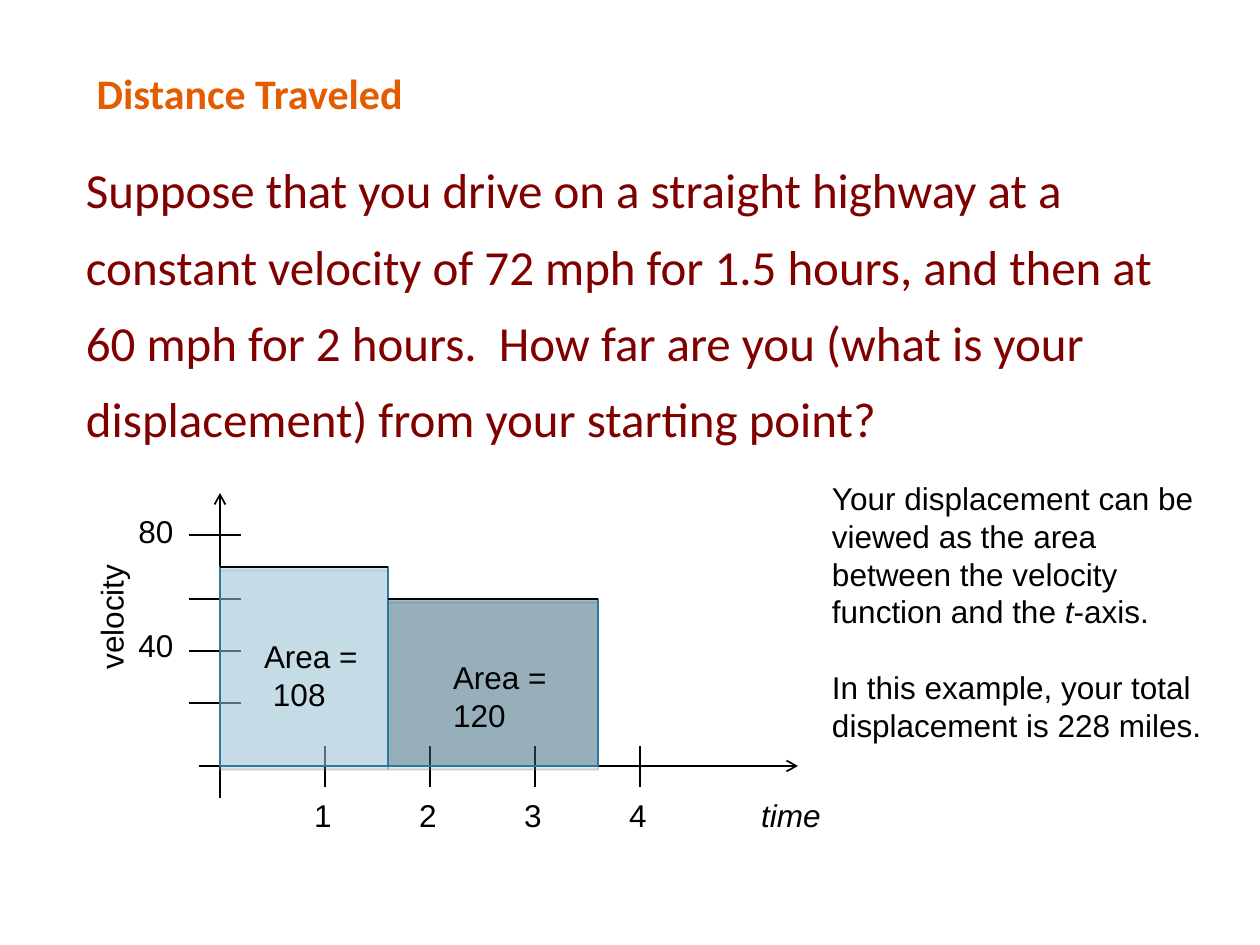
from lxml.etree import SubElement
from pptx import Presentation
from pptx.dml.color import RGBColor
from pptx.enum.shapes import MSO_CONNECTOR, MSO_SHAPE
from pptx.enum.text import MSO_ANCHOR, PP_ALIGN
from pptx.oxml.ns import qn
from pptx.util import Emu, Pt

BLACK = RGBColor(0x00, 0x00, 0x00)
ORANGE = RGBColor(0xE4, 0x5C, 0x00)
MAROON = RGBColor(0x80, 0x00, 0x00)
LIGHT_BLUE = RGBColor(0x9F, 0xCF, 0xE4)
DARK_BLUE = RGBColor(0x21, 0x5D, 0x77)
EDGE_BLUE = RGBColor(0x28, 0x7A, 0x9E)
SHADOW_GREY = RGBColor(0x80, 0x80, 0x80)


def px(length):
    """Turn pixels at 126 to the inch into EMU."""
    return Emu(round(length * 914400 / 126))


def add_run(paragraph, text, size=18, font="Arial", color=BLACK, bold=False, italic=False):
    """Add one formatted run."""
    run = paragraph.add_run()
    run.text = text
    run.font.size = Pt(size)
    run.font.name = font
    run.font.color.rgb = color
    run.font.bold = bold
    run.font.italic = italic


def add_frame(slide, left, top, width, height):
    """Add a wrapping text box without insets; return its shape and frame."""
    textbox = slide.shapes.add_textbox(px(left), px(top), px(width), px(height))
    frame = textbox.text_frame
    frame.word_wrap = True
    frame.margin_left = frame.margin_right = frame.margin_top = frame.margin_bottom = 0
    return textbox, frame


def add_label(slide, text, center_x, center_y, width=120, italic=False):
    """Add a one-line label centred on a point."""
    label, frame = add_frame(slide, center_x - width / 2, center_y - 19, width, 38)
    frame.vertical_anchor = MSO_ANCHOR.MIDDLE
    frame.paragraphs[0].alignment = PP_ALIGN.CENTER
    add_run(frame.paragraphs[0], text, italic=italic)
    return label


def add_line(slide, x1, y1, x2, y2, arrow=False):
    """Draw a thin black line, with an arrowhead at its end if asked."""
    line = slide.shapes.add_connector(MSO_CONNECTOR.STRAIGHT, px(x1), px(y1), px(x2), px(y2))
    line.line.color.rgb = BLACK
    line.line.width = Pt(1)
    if arrow:
        SubElement(line.line._get_or_add_ln(), qn("a:tailEnd"), type="arrow")
    SubElement(line._element.spPr, qn("a:effectLst"))


def add_area(slide, left, top, right, bottom, color, opacity):
    """Draw a translucent area with a soft grey shadow below it."""
    area = slide.shapes.add_shape(
        MSO_SHAPE.RECTANGLE, px(left), px(top), px(right - left), px(bottom - top))
    area.fill.solid()
    area.fill.fore_color.rgb = color
    area.line.color.rgb = EDGE_BLUE
    area.line.width = Pt(1)
    properties = area._element.spPr
    fill_color = properties.find(qn("a:solidFill")).find(qn("a:srgbClr"))
    SubElement(fill_color, qn("a:alpha"), val=str(opacity * 1000))
    area.shadow.inherit = False
    shadow = SubElement(properties.find(qn("a:effectLst")), qn("a:outerShdw"),
                        dist=str(Pt(2)), dir="5400000", rotWithShape="0")
    shadow_color = SubElement(shadow, qn("a:srgbClr"), val=str(SHADOW_GREY))
    SubElement(shadow_color, qn("a:alpha"), val="40000")


def place_title(slide, left, top, width, height):
    """Place and format the slide title."""
    title = slide.shapes.title
    title.left, title.top, title.width, title.height = map(px, (left, top, width, height))
    title.text_frame.vertical_anchor = MSO_ANCHOR.MIDDLE
    heading = title.text_frame.paragraphs[0]
    heading.alignment = PP_ALIGN.LEFT
    add_run(heading, "Distance Traveled", 24, "Calibri", ORANGE, bold=True)


def place_question(slide, left, top, width, height):
    """Place the driving question."""
    question = add_frame(slide, left, top, width, height)[1].paragraphs[0]
    question.line_spacing = 1.3
    add_run(question, "Suppose that you drive on a straight highway at a constant velocity "
            "of 72 mph for 1.5 hours, and then at 60 mph for 2 hours.  How far are you "
            "(what is your displacement) from your starting point?", 28, "Calibri", MAROON)


def place_graph(slide, left, top, width, height):
    """Draw the velocity graph with its two areas."""
    origin_x, origin_y = left + 132, top + 273
    hour = 105
    for number in range(1, 5):
        tick_x = origin_x + number * hour
        add_line(slide, tick_x, origin_y - 20, tick_x, origin_y + 21)
        add_label(slide, str(number), tick_x - 2, origin_y + 49, 40)
    for tick_y in (42, 106, 158, 210):
        add_line(slide, origin_x - 31, top + tick_y, origin_x + 21, top + tick_y)
    add_line(slide, origin_x, top + height, origin_x, top, arrow=True)
    add_line(slide, origin_x - 21, origin_y, left + width, origin_y, arrow=True)

    for speed, label_y in (("80", 38), ("40", 152)):
        add_label(slide, speed, left + 68, top + label_y, 50)
    add_label(slide, "time", left + 703, origin_y + 49, 90, italic=True)
    add_label(slide, "velocity", left + 23, top + 124, 130).rotation = 270

    change_x, end_x = origin_x + 168, origin_x + 378
    fast_y, slow_y = top + 74, top + 106
    for start, end, speed_y, color, opacity in (
            (origin_x, change_x, fast_y, LIGHT_BLUE, 47),
            (change_x, end_x, slow_y, DARK_BLUE, 41)):
        add_area(slide, start, speed_y, end, origin_y, color, opacity)
        add_line(slide, start, speed_y, end, speed_y)

    for distance, label_x, label_y, indent in (("108", 176, 144, 9), ("120", 365, 165, 0)):
        frame = add_frame(slide, left + label_x, top + label_y, 110, 76)[1]
        add_run(frame.paragraphs[0], "Area =")
        value = frame.add_paragraph()
        value._p.get_or_add_pPr().set("marL", str(px(indent)))
        add_run(value, distance)


def place_explanation(slide, left, top, width, height):
    """Place the explanation beside the graph."""
    frame = add_frame(slide, left, top, width, height)[1]
    meaning = frame.paragraphs[0]
    add_run(meaning, "Your displacement can be viewed as the area between "
            "the velocity function and the ")
    add_run(meaning, "t", italic=True)
    add_run(meaning, "-axis.")
    result = frame.add_paragraph()
    result.space_before = Pt(21.5)
    add_run(result, "In this example, your total displacement is 228 miles.")


def main():
    """Build and save the slide."""
    presentation = Presentation()
    presentation.slide_width, presentation.slide_height = px(1260), px(945)
    slide = presentation.slides.add_slide(presentation.slide_layouts[5])
    place_title(slide, 84, 52, 735, 81)
    place_question(slide, 86, 142, 1109, 320)
    place_graph(slide, 88, 493, 710, 305)
    place_explanation(slide, 832, 479, 374, 268)
    presentation.save("out.pptx")


if __name__ == "__main__":
    main()
